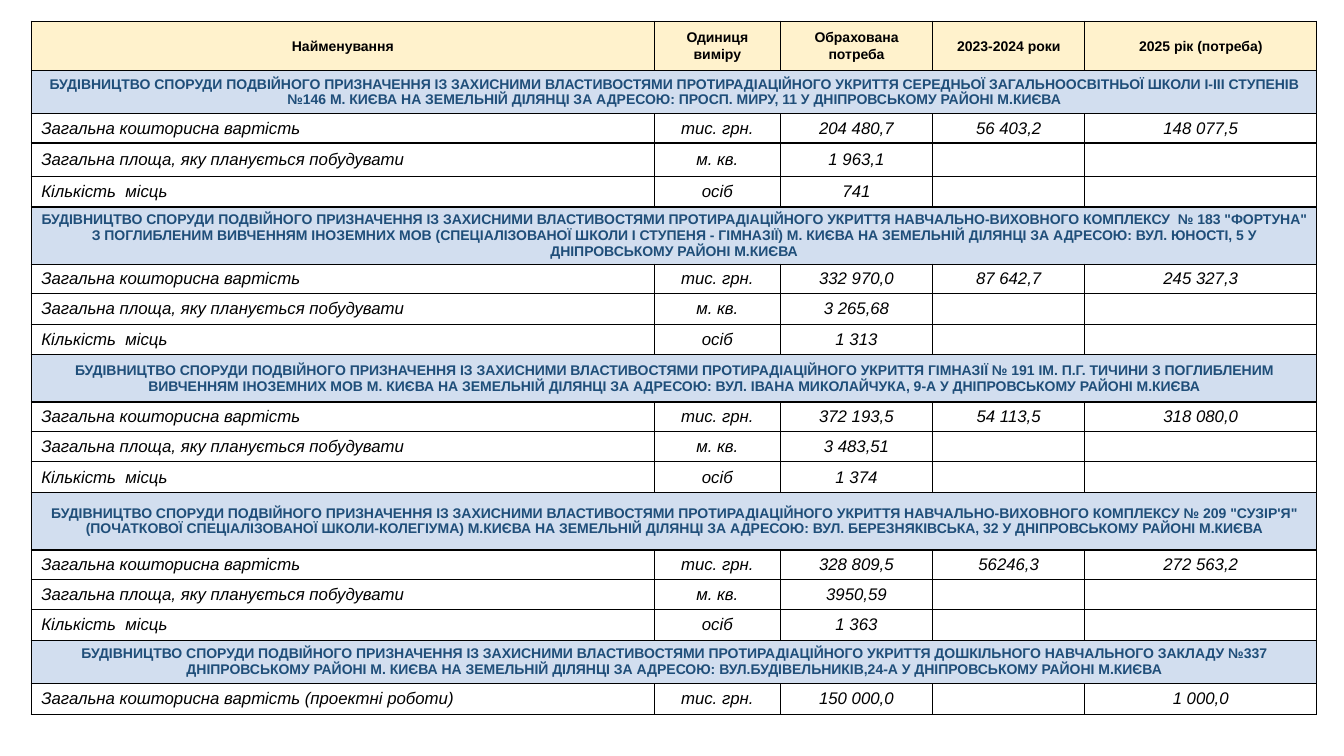
"""Builds a slide with a table of shelter construction costs for five schools."""
import pptx
import pptx.dml.color
import pptx.enum.text
import pptx.oxml
import pptx.oxml.ns
import pptx.util

HEADERS = ["Найменування", "Одиниця виміру", "Обрахована потреба", "2023-2024 роки", "2025 рік (потреба)"]
OPENING = "БУДІВНИЦТВО СПОРУДИ ПОДВІЙНОГО ПРИЗНАЧЕННЯ ІЗ ЗАХИСНИМИ ВЛАСТИВОСТЯМИ ПРОТИРАДІАЦІЙНОГО УКРИТТЯ "
COST = ("Загальна кошторисна вартість", "тис. грн.")
DESIGN_COST = ("Загальна кошторисна вартість (проектні роботи)", "тис. грн.")
AREA = ("Загальна площа, яку планується побудувати", "м. кв.")
PLACES = ("Кількість  місць", "осіб")

PROJECTS = [
    ("СЕРЕДНЬОЇ ЗАГАЛЬНООСВІТНЬОЇ ШКОЛИ І-ІІІ СТУПЕНІВ №146 М. КИЄВА НА ЗЕМЕЛЬНІЙ ДІЛЯНЦІ "
     "ЗА АДРЕСОЮ: ПРОСП. МИРУ, 11 У ДНІПРОВСЬКОМУ РАЙОНІ М.КИЄВА", 0.43,
     [(COST, "204 480,7", "56 403,2", "148 077,5"), (AREA, "1 963,1", "", ""), (PLACES, "741", "", "")]),
    ("НАВЧАЛЬНО-ВИХОВНОГО КОМПЛЕКСУ  № 183 \"ФОРТУНА\" З ПОГЛИБЛЕНИМ ВИВЧЕННЯМ ІНОЗЕМНИХ МОВ "
     "(СПЕЦІАЛІЗОВАНОЇ ШКОЛИ І СТУПЕНЯ - ГІМНАЗІЇ) М. КИЄВА НА ЗЕМЕЛЬНІЙ ДІЛЯНЦІ "
     "ЗА АДРЕСОЮ: ВУЛ. ЮНОСТІ, 5 У ДНІПРОВСЬКОМУ РАЙОНІ М.КИЄВА", 0.57,
     [(COST, "332 970,0", "87 642,7", "245 327,3"), (AREA, "3 265,68", "", ""), (PLACES, "1 313", "", "")]),
    ("ГІМНАЗІЇ № 191 ІМ. П.Г. ТИЧИНИ З ПОГЛИБЛЕНИМ ВИВЧЕННЯМ ІНОЗЕМНИХ МОВ М. КИЄВА НА ЗЕМЕЛЬНІЙ "
     "ДІЛЯНЦІ ЗА АДРЕСОЮ: ВУЛ. ІВАНА МИКОЛАЙЧУКА, 9-А У ДНІПРОВСЬКОМУ РАЙОНІ М.КИЄВА", 0.47,
     [(COST, "372 193,5", "54 113,5", "318 080,0"), (AREA, "3 483,51", "", ""), (PLACES, "1 374", "", "")]),
    ("НАВЧАЛЬНО-ВИХОВНОГО КОМПЛЕКСУ № 209 \"СУЗІР'Я\" (ПОЧАТКОВОЇ СПЕЦІАЛІЗОВАНОЇ ШКОЛИ-КОЛЕГІУМА) "
     "М.КИЄВА НА ЗЕМЕЛЬНІЙ ДІЛЯНЦІ ЗА АДРЕСОЮ: ВУЛ. БЕРЕЗНЯКІВСЬКА, 32 У ДНІПРОВСЬКОМУ РАЙОНІ М.КИЄВА", 0.57,
     [(COST, "328 809,5", "56246,3", "272 563,2"), (AREA, "3950,59", "", ""), (PLACES, "1 363", "", "")]),
    ("ДОШКІЛЬНОГО НАВЧАЛЬНОГО ЗАКЛАДУ №337 ДНІПРОВСЬКОМУ РАЙОНІ М. КИЄВА НА ЗЕМЕЛЬНІЙ ДІЛЯНЦІ "
     "ЗА АДРЕСОЮ: ВУЛ.БУДІВЕЛЬНИКІВ,24-А У ДНІПРОВСЬКОМУ РАЙОНІ М.КИЄВА", 0.43,
     [(DESIGN_COST, "150 000,0", "", "1 000,0")]),
]

THEME = {
    "font": "Arial",
    "border": ("000000", 1),
    "header": {"fill": "FFF2CC", "ink": "000000", "size": 10, "bold": True},
    "project": {"fill": "D2DEEF", "ink": "1F4E79", "size": 10, "bold": True},
    "figure": {"fill": "FFFFFF", "ink": "000000", "size": 12, "bold": False},
}
SLIDE_SIZE = (13.33, 7.5)
TABLE_CORNER = (0.31, 0.21)
COLUMNS = [6.18, 1.25, 1.51, 1.51, 2.3]
HEADER_ROW, FIGURE_ROW, FIRST_AREA_ROW = 0.49, 0.29, 0.33


def table_rows():
    rows = [("header", HEADER_ROW, HEADERS)]
    for number, (school, height, figures) in enumerate(PROJECTS):
        rows.append(("project", height, [OPENING + school] + [""] * (len(COLUMNS) - 1)))
        for indicator, *values in figures:
            tall = number == 0 and indicator is AREA
            rows.append(("figure", FIRST_AREA_ROW if tall else FIGURE_ROW, [*indicator, *values]))
    return rows


def draw_borders(cell):
    colour, width = THEME["border"]
    properties = cell._tc.get_or_add_tcPr()
    for side in ("lnL", "lnR", "lnT", "lnB"):
        properties.append(pptx.oxml.parse_xml(
            f'<a:{side} {pptx.oxml.ns.nsdecls("a")} w="{pptx.util.Pt(width)}">'
            f'<a:solidFill><a:srgbClr val="{colour}"/></a:solidFill></a:{side}>'))


def fill_cell(cell, text, kind, column):
    style = THEME[kind]
    draw_borders(cell)
    cell.fill.solid()
    cell.fill.fore_color.rgb = pptx.dml.color.RGBColor.from_string(style["fill"])
    cell.vertical_anchor = pptx.enum.text.MSO_ANCHOR.MIDDLE
    paragraph = cell.text_frame.paragraphs[0]
    left = kind == "figure" and column == 0
    paragraph.alignment = pptx.enum.text.PP_ALIGN.LEFT if left else pptx.enum.text.PP_ALIGN.CENTER
    if kind == "header":
        cell.margin_left = cell.margin_right = pptx.util.Inches(0.07)
        cell.margin_top = cell.margin_bottom = 0
        paragraph.line_spacing = 1.07
        paragraph.space_after = pptx.util.Pt(8)
    if not text:
        paragraph._p.append(pptx.oxml.parse_xml(
            f'<a:endParaRPr {pptx.oxml.ns.nsdecls("a")} sz="{style["size"] * 100}"/>'))
        return
    run = paragraph.add_run()
    run.text = text
    run.font.name = THEME["font"]
    run.font.size = pptx.util.Pt(style["size"])
    run.font.bold = style["bold"]
    run.font.italic = kind == "figure"
    run.font.color.rgb = pptx.dml.color.RGBColor.from_string(style["ink"])


def main():
    deck = pptx.Presentation()
    deck.slide_width, deck.slide_height = map(pptx.util.Inches, SLIDE_SIZE)
    slide = deck.slides.add_slide(deck.slide_layouts[6])
    rows = table_rows()
    extent = (sum(COLUMNS), sum(height for _, height, _ in rows))
    costs = slide.shapes.add_table(
        len(rows), len(COLUMNS), *map(pptx.util.Inches, TABLE_CORNER + extent)).table
    costs.first_row = costs.horz_banding = False
    for column, width in zip(costs.columns, COLUMNS):
        column.width = pptx.util.Inches(width)
    for index, (kind, height, texts) in enumerate(rows):
        costs.rows[index].height = pptx.util.Inches(height)
        for column, text in enumerate(texts):
            fill_cell(costs.cell(index, column), text, kind, column)
        if kind == "project":
            costs.cell(index, 0).merge(costs.cell(index, len(COLUMNS) - 1))
    deck.save("out.pptx")


if __name__ == "__main__":
    main()
